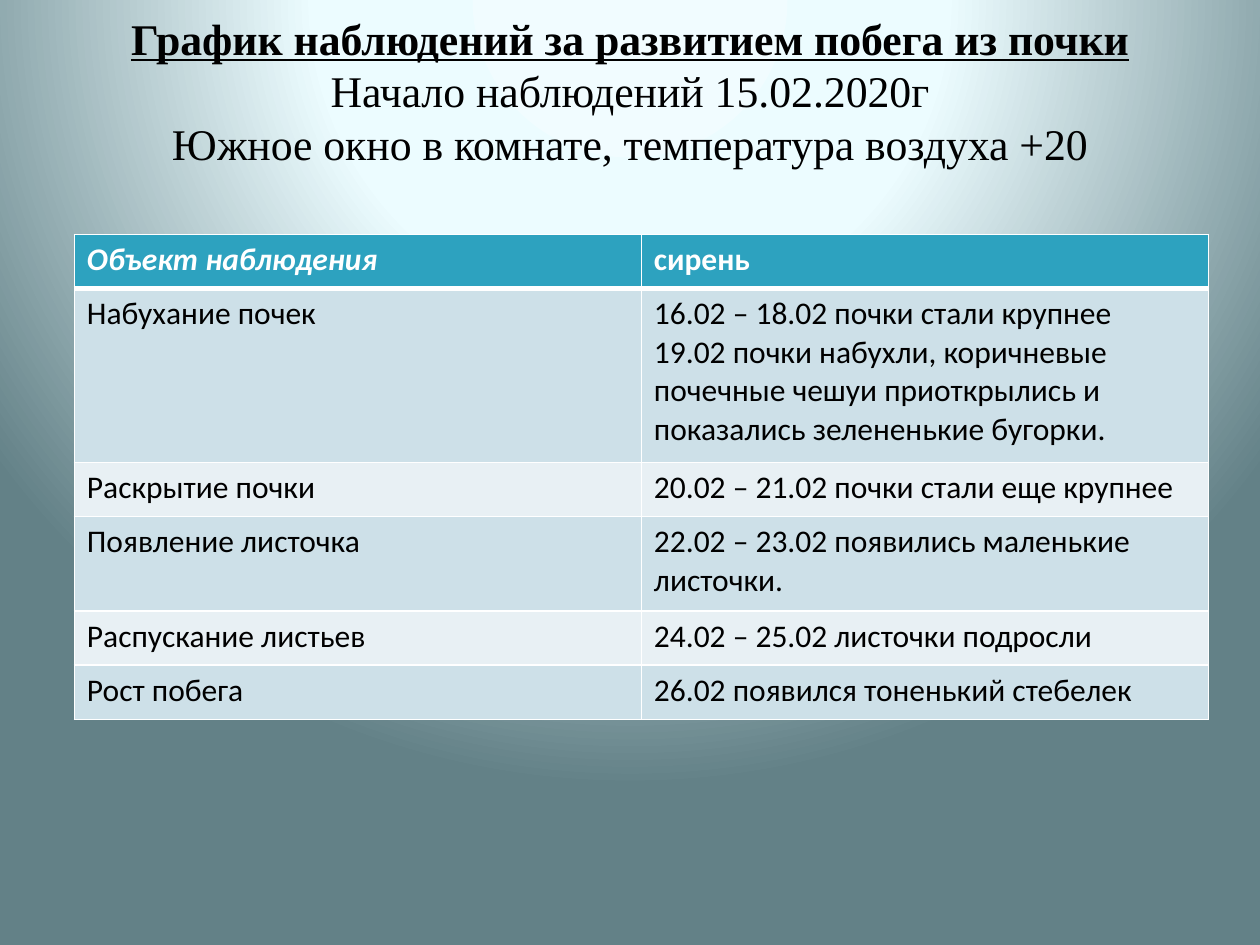
from copy import deepcopy
from typing import NamedTuple

from lxml.etree import SubElement
from pptx import Presentation
from pptx.dml.color import RGBColor
from pptx.enum.text import MSO_ANCHOR, MSO_AUTO_SIZE, PP_ALIGN
from pptx.oxml import parse_xml
from pptx.oxml.ns import nsdecls, qn
from pptx.util import Inches, Pt

BLACK = RGBColor(0x00, 0x00, 0x00)
WHITE = RGBColor(0xFF, 0xFF, 0xFF)
HEADER_BLUE = RGBColor(0x2D, 0xA2, 0xBF)
BAND_DARK = RGBColor(0xCD, 0xE0, 0xE8)
BAND_LIGHT = RGBColor(0xE8, 0xF0, 0xF4)
GLOW_CENTER = RGBColor(0xF1, 0xFC, 0xFF)
GLOW_MIDDLE = RGBColor(0xEC, 0xFC, 0xFF)
GLOW_EDGE = RGBColor(0x63, 0x81, 0x87)


class Stage(NamedTuple):
    name: str
    notes: list[str]
    height: float


HEADER = Stage("Объект наблюдения", ["сирень"], 0.43)
STAGES = [
    Stage("Набухание почек", [
        "16.02 – 18.02 почки стали крупнее",
        "19.02 почки набухли, коричневые почечные чешуи приоткрылись "
        "и показались зелененькие бугорки.",
    ], 1.38),
    Stage("Раскрытие почки", ["20.02 – 21.02 почки стали еще крупнее"], 0.43),
    Stage("Появление листочка", ["22.02 – 23.02 появились маленькие листочки."], 0.75),
    Stage("Распускание листьев", ["24.02 – 25.02 листочки подросли"], 0.43),
    Stage("Рост побега", ["26.02 появился тоненький стебелек"], 0.43),
]
TITLE_LINES = [
    "График наблюдений за развитием побега из почки",
    "Начало наблюдений 15.02.2020г",
    "Южное окно в комнате, температура воздуха +20",
]


def add_span(para, text: str, *, size: float, font: str, color: RGBColor,
             bold: bool = False, italic: bool = False, underline: bool = False):
    span = para.add_run()
    span.text = text
    span.font.size = Pt(size)
    span.font.name = font
    span.font.color.rgb = color
    span.font.bold = bold
    span.font.italic = italic
    span.font.underline = underline
    return span


def set_glow_background(page) -> None:
    """Fill the page with a round gradient centred above its middle."""
    stops = "".join(
        f'<a:gs pos="{position * 1000}"><a:srgbClr val="{color}"/></a:gs>'
        for position, color in [(0, GLOW_CENTER), (40, GLOW_MIDDLE), (100, GLOW_EDGE)]
    )
    background = parse_xml(
        f'<p:bg {nsdecls("p", "a")}><p:bgPr><a:gradFill rotWithShape="1">'
        f'<a:gsLst>{stops}</a:gsLst><a:path path="circle">'
        '<a:fillToRect l="50000" t="-80000" r="50000" b="180000"/></a:path>'
        '</a:gradFill><a:effectLst/></p:bgPr></p:bg>'
    )
    page.element.cSld.insert(0, background)


def fill_title(title) -> None:
    title.left, title.top = Inches(0.5), Inches(0.3)
    title.width, title.height = Inches(9), Inches(1.25)
    frame = title.text_frame
    frame.auto_size = MSO_AUTO_SIZE.NONE
    frame.vertical_anchor = MSO_ANCHOR.MIDDLE
    para = frame.paragraphs[0]
    para.alignment = PP_ALIGN.CENTER
    for index, line in enumerate(TITLE_LINES):
        span = add_span(para, line, size=25, font="Times New Roman", color=BLACK,
                        bold=index == 0, underline=index == 0)
        para.add_line_break()
        line_break = para._p.findall(qn("a:br"))[-1]
        line_break.append(deepcopy(span.font._rPr))


def set_borders(cell, bottom_width: float) -> None:
    """Draw white cell borders; the schema wants them before the fill."""
    properties = cell._tc.get_or_add_tcPr()
    widths = {"a:lnL": 1, "a:lnR": 1, "a:lnT": 1, "a:lnB": bottom_width}
    for tag, width in widths.items():
        line = SubElement(properties, qn(tag), w=str(Pt(width)))
        solid = SubElement(line, qn("a:solidFill"))
        SubElement(solid, qn("a:srgbClr"), val=str(WHITE))


def fill_cell(cell, lines: list[str], *, fill: RGBColor, color: RGBColor,
              bold: bool = False, italic: bool = False, bottom_width: float = 1) -> None:
    set_borders(cell, bottom_width)
    cell.fill.solid()
    cell.fill.fore_color.rgb = fill
    frame = cell.text_frame
    for index, line in enumerate(lines):
        para = frame.add_paragraph() if index else frame.paragraphs[0]
        add_span(para, line, size=18, font="Calibri", color=color, bold=bold, italic=italic)


def add_schedule(page) -> None:
    rows = [HEADER, *STAGES]
    height = sum(row.height for row in rows)
    table = page.shapes.add_table(len(rows), 2, Inches(0.59), Inches(1.86),
                                  Inches(9), Inches(height)).table
    for index, row in enumerate(rows):
        table.rows[index].height = Inches(row.height)
        name_cell, notes_cell = table.rows[index].cells
        if row is HEADER:
            style = dict(fill=HEADER_BLUE, color=WHITE, bold=True, bottom_width=3)
        else:
            style = dict(fill=BAND_DARK if index % 2 else BAND_LIGHT, color=BLACK)
        fill_cell(name_cell, [row.name], italic=row is HEADER, **style)
        fill_cell(notes_cell, row.notes, **style)


def main() -> None:
    deck = Presentation()
    deck.slide_width, deck.slide_height = Inches(10), Inches(7.5)
    page = deck.slides.add_slide(deck.slide_layouts.get_by_name("Title Only"))
    set_glow_background(page)
    fill_title(page.shapes.title)
    add_schedule(page)
    deck.save("out.pptx")


if __name__ == "__main__":
    main()
